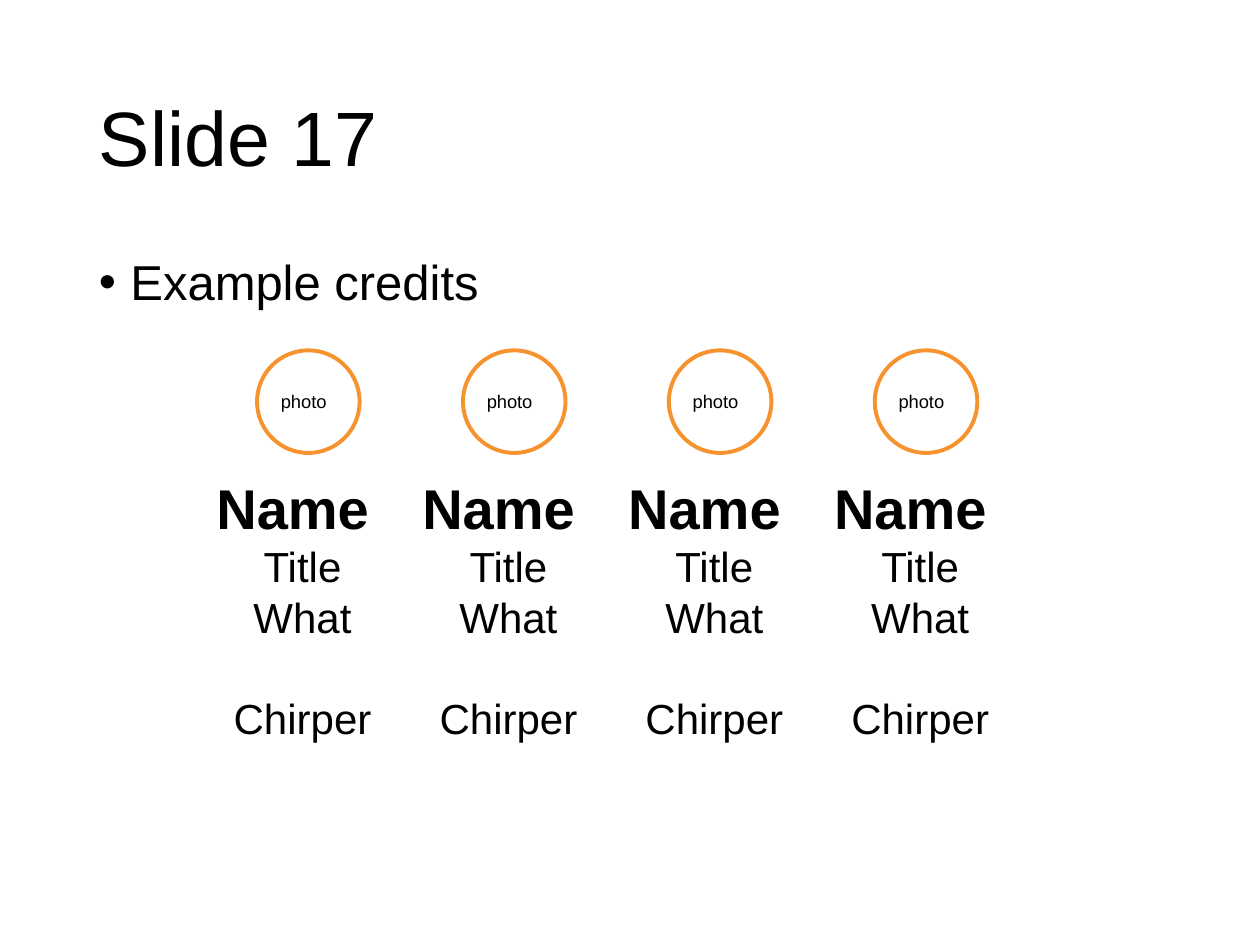
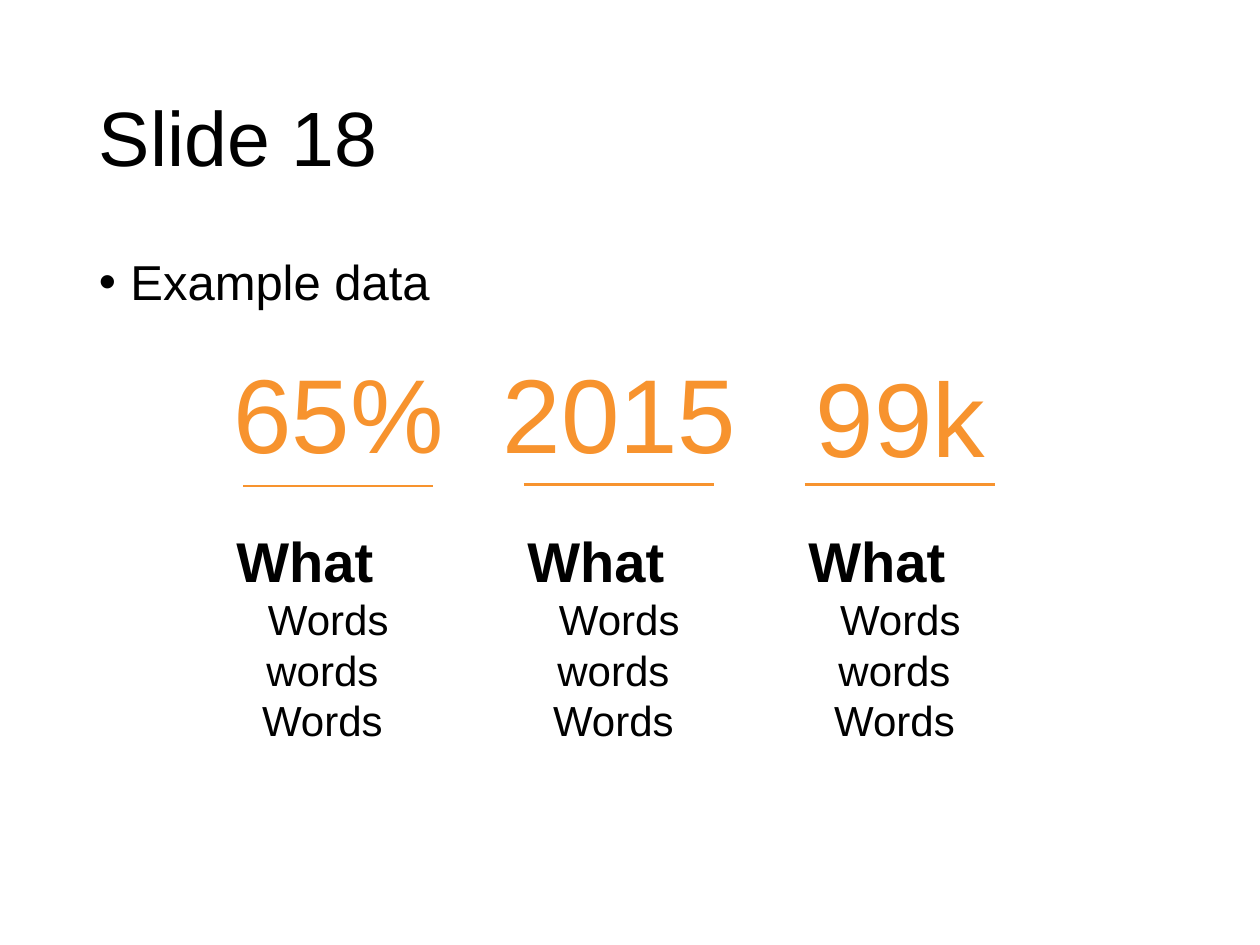
import pptx
import pptx.util
import pptx.dml.color
import pptx.enum.shapes
import pptx.enum.text
import pptx.oxml
import pptx.oxml.ns

Pt = pptx.util.Pt
ALIGN = pptx.enum.text.PP_ALIGN
ANCHOR = pptx.enum.text.MSO_ANCHOR
BLACK, WHITE, ORANGE = "000000", "FFFFFF", "F7932E"
HEADING = {"size": Pt(32), "bold": True}
DETAIL = {"size": Pt(24)}


def color(value):
    return pptx.dml.color.RGBColor.from_string(value)


def set_values(target, values):
    for name, value in values.items():
        setattr(target, name, value)


class Deck:
    """Holds the shared style and the current slide."""

    font = "Arial"
    inset = 5.04

    def __init__(self):
        self.presentation = pptx.Presentation()
        set_values(self.presentation, {"slide_width": Pt(720), "slide_height": Pt(540)})
        self.slide = None

    def add_slide(self, title, topic):
        self.slide = self.presentation.slides.add_slide(self.presentation.slide_layouts[6])
        self.slide.background.fill.solid()
        self.slide.background.fill.fore_color.rgb = color(WHITE)
        frame = self.text_box(49.5, 28.75, 621, 104.4, ANCHOR.MIDDLE, 7.2, 3.6)
        self.paragraph(frame, title, {"size": Pt(44)}, {"line_spacing": 0.9})
        frame = self.text_box(49.5, 143.75, 621, 342.6, ANCHOR.TOP, 7.2, 3.6)
        paragraph = self.paragraph(frame, topic, {"size": Pt(28)},
                                   {"line_spacing": 0.9, "space_before": Pt(10)})
        self.bullet(paragraph, 18)

    def frame(self, shape, anchor, side=inset, edge=inset):
        set_values(shape.text_frame, {
            "word_wrap": True, "vertical_anchor": anchor,
            "margin_left": Pt(side), "margin_right": Pt(side),
            "margin_top": Pt(edge), "margin_bottom": Pt(edge)})
        return shape.text_frame

    def text_box(self, left, top, width, height, anchor, side=inset, edge=inset):
        shape = self.slide.shapes.add_textbox(Pt(left), Pt(top), Pt(width), Pt(height))
        return self.frame(shape, anchor, side, edge)

    def paragraph(self, frame, text, font, layout, text_color=BLACK):
        first = frame.paragraphs[0]
        paragraph = frame.add_paragraph() if first.runs else first
        set_values(paragraph, {"alignment": ALIGN.LEFT, **layout})
        run = paragraph.add_run()
        run.text = text
        set_values(run.font, {"name": self.font, "bold": False, **font})
        run.font.color.rgb = color(text_color)
        return paragraph

    def indent(self, paragraph, left, first=0):
        properties = paragraph._p.get_or_add_pPr()
        properties.set("marL", str(Pt(left)))
        properties.set("indent", str(Pt(first)))
        return properties

    def bullet(self, paragraph, width):
        properties = self.indent(paragraph, width, -width)
        for tag, name, value in (("a:buFont", "typeface", self.font), ("a:buChar", "char", "•")):
            element = pptx.oxml.ns.qn(tag)
            properties.makeelement(element)
            child = properties.makeelement(element, {name: value})
            properties.append(child)

    def circle(self, left, top, size, text):
        shape = self.slide.shapes.add_shape(
            pptx.enum.shapes.MSO_SHAPE.OVAL, Pt(left), Pt(top), Pt(size), Pt(size))
        shape.shadow.inherit = False
        shape.fill.solid()
        shape.fill.fore_color.rgb = color(WHITE)
        shape.line.color.rgb = color(ORANGE)
        shape.line.width = Pt(2.25)
        self.paragraph(self.frame(shape, ANCHOR.MIDDLE), text, {"size": Pt(10.5)}, {})

    def rule(self, left, top, width):
        line = self.slide.shapes.add_connector(
            pptx.enum.shapes.MSO_CONNECTOR.STRAIGHT, Pt(left), Pt(top), Pt(left + width), Pt(top))
        line.line.color.rgb = color(ORANGE)
        line.line.width = Pt(1.5)
        properties = line._element.spPr
        properties.append(properties.makeelement(pptx.oxml.ns.qn("a:effectLst")))

    def figure(self, left, top, text):
        frame = self.text_box(left, top, 205.9, 50.4, ANCHOR.BOTTOM)
        self.paragraph(frame, text, {"size": Pt(60)},
                       {"alignment": ALIGN.CENTER, "line_spacing": 0.9}, ORANGE)

    def caption(self, left, top, width, heading, details, outdent):
        """Heading centred further left than the details, which are indented by outdent."""
        frame = self.text_box(left - outdent, top, width + outdent, 72, ANCHOR.TOP)
        self.paragraph(frame, heading, HEADING, {"alignment": ALIGN.CENTER})
        for text, gap in details:
            paragraph = self.paragraph(frame, text, DETAIL,
                                       {"alignment": ALIGN.CENTER, "space_before": Pt(gap)})
            self.indent(paragraph, outdent)


def main():
    deck = Deck()

    # Credits: a photo circle above each person's details
    deck.add_slide("Slide 17", "Example credits")
    credit_step = 117.65
    for column in range(4):
        deck.circle(146.9 + column * credit_step, 200.2, 58.6, "photo")
    for column in range(4):
        deck.caption(113.7 + column * credit_step, 265.7, 125, "Name",
                     [("Title ", 0), ("What ", 0), ("Chirper ", 28.8)], 17.8)

    # Data: a large figure, a rule and a caption in each column
    deck.add_slide("Slide 18", "Example data")
    data_step = 160.55
    columns = [("65%", 226.8, 277.7, 123.1), ("2015", 226.8, 277, 289.4), ("99k", 229, 277, 450)]
    for column, (number, number_top, rule_top, caption_left) in enumerate(columns):
        offset = column * data_step
        deck.rule(138.9 + offset, rule_top, 108.5)
        deck.caption(caption_left, 295.9, 128.9, "What",
                     [("Words words ", 0), ("Words ", 0)], 26.7)
        deck.figure(90.5 + offset, number_top, number)

    deck.presentation.save("out.pptx")


if __name__ == "__main__":
    main()
